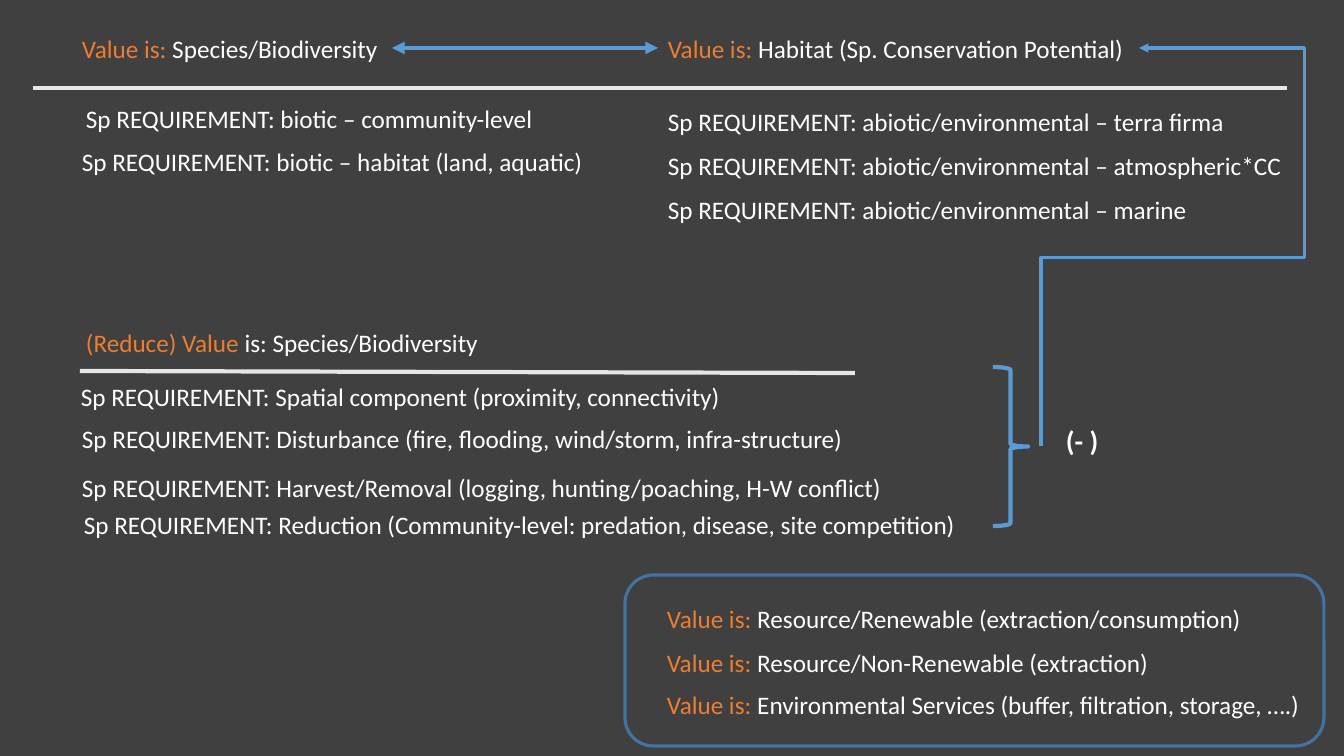
from lxml import etree
from pptx import Presentation
from pptx.dml.color import RGBColor
from pptx.enum.shapes import MSO_CONNECTOR, MSO_SHAPE
from pptx.enum.text import MSO_AUTO_SIZE
from pptx.oxml.ns import qn
from pptx.util import Emu, Pt

STRAIGHT, ELBOW = MSO_CONNECTOR.STRAIGHT, MSO_CONNECTOR.ELBOW
ROUND_RECT, BRACE = MSO_SHAPE.ROUNDED_RECTANGLE, MSO_SHAPE.RIGHT_BRACE
FIT_SHAPE = MSO_AUTO_SIZE.SHAPE_TO_FIT_TEXT

SCALE = 6858000 / 756  # EMU in one px
BACKGROUND = RGBColor(0x40, 0x40, 0x40)
WHITE = RGBColor(0xFF, 0xFF, 0xFF)
ORANGE = RGBColor(0xED, 0x7D, 0x31)
BLUE = RGBColor(0x5B, 0x9B, 0xD5)
DARK_BLUE = RGBColor(0x43, 0x73, 0x9E)
RULE_GREY = RGBColor(0xE7, 0xE6, 0xE6)

VALUE = "Value is: "
REQUIREMENT = "Sp REQUIREMENT: "

# left, top, width, text
REQUIREMENTS = [
    (76, 98, 473, "biotic – community-level"),
    (72, 141, 537, "biotic – habitat (land, aquatic)"),
    (658, 101, 583, "abiotic/environmental – terra firma"),
    (658, 145, 640, "abiotic/environmental – atmospheric*CC"),
    (658, 189, 544, "abiotic/environmental – marine"),
    (71, 376, 666, "Spatial component (proximity, connectivity)"),
    (72, 418, 790, "Disturbance (fire, flooding, wind/storm, infra-structure)"),
    (72, 467, 841, "Harvest/Removal (logging, hunting/poaching, H-W conflict)"),
    (74, 504, 903, "Reduction (Community-level: predation, disease, site competition)"),
]
# top, width, text
RESOURCES = [
    (598, 602, "Resource/Renewable (extraction/consumption)"),
    (642, 507, "Resource/Non-Renewable (extraction)"),
    (684, 678, "Environmental Services (buffer, filtration, storage, ….)"),
]


def px(n):
    return Emu(round(n * SCALE))


def add_text(s, left, top, width, text, lead="", size=18, bold=False, height=40):
    """Add a one-line text box; lead is an orange run before the white text."""
    box = s.shapes.add_textbox(px(left), px(top), px(width), px(height))
    tf = box.text_frame
    tf.word_wrap = False
    tf.auto_size = FIT_SHAPE
    p = tf.paragraphs[0]
    for words, color in ((lead, ORANGE), (text, WHITE)):
        if words:
            r = p.add_run()
            r.text = words
            r.font.name = "Calibri"
            r.font.size = Pt(size)
            r.font.bold = bold
            r.font.color.rgb = color
    return box


def add_outline(s, kind, left, top, width, height, color, weight):
    sp = s.shapes.add_shape(kind, px(left), px(top), px(width), px(height))
    sp.shadow.inherit = False
    sp.fill.background()
    sp.line.color.rgb = color
    sp.line.width = Pt(weight)


def add_line(s, x1, y1, x2, y2, color, weight, kind=STRAIGHT, arrows=()):
    """Add a connector; arrows names its ends (headEnd, tailEnd) that get a triangle."""
    line = s.shapes.add_connector(kind, px(x1), px(y1), px(x2), px(y2))
    line.line.color.rgb = color
    line.line.width = Pt(weight)
    sp_pr = line._element.spPr
    for end in arrows:
        etree.SubElement(sp_pr.find(qn("a:ln")), qn(f"a:{end}"), type="triangle")
    etree.SubElement(sp_pr, qn("a:effectLst"))
    return line


def bend_around(line, center_x, center_y, length, breadth, adjustments):
    """Turn an elbow into a three-corner route that first runs upwards."""
    line.left, line.top = px(center_x - length / 2), px(center_y - breadth / 2)
    line.width, line.height = px(length), px(breadth)
    sp_pr = line._element.spPr
    xfrm = sp_pr.find(qn("a:xfrm"))
    for name, value in (("rot", "5400000"), ("flipH", "1"), ("flipV", "1")):
        xfrm.set(name, value)
    geometry = sp_pr.find(qn("a:prstGeom"))
    geometry.set("prst", "bentConnector4")
    guides = geometry.find(qn("a:avLst"))
    if guides is None:
        guides = etree.SubElement(geometry, qn("a:avLst"))
    for i, value in enumerate(adjustments, 1):
        etree.SubElement(guides, qn("a:gd"), name=f"adj{i}", fmla=f"val {value}")


def main():
    prs = Presentation()
    prs.slide_width, prs.slide_height = px(1344), px(756)
    s = prs.slides.add_slide(prs.slide_layouts[6])
    s.background.fill.solid()
    s.background.fill.fore_color.rgb = BACKGROUND

    species = add_text(s, 72, 28, 320, "Species/Biodiversity", VALUE)
    habitat = add_text(s, 658, 28, 481, "Habitat (Sp. Conservation Potential)", VALUE)
    add_text(s, 76, 322, 430, "is: Species/Biodiversity", "(Reduce) Value ")
    for left, top, width, text in REQUIREMENTS:
        add_text(s, left, top, width, REQUIREMENT + text)

    add_outline(s, ROUND_RECT, 625, 575, 699, 171, DARK_BLUE, 2.25)
    for top, width, text in RESOURCES:
        add_text(s, 657, top, width, text, VALUE)

    add_line(s, 33, 88, 1287, 88, RULE_GREY, 3)
    add_line(s, 80, 371, 855, 373, RULE_GREY, 3)

    add_outline(s, BRACE, 993, 367, 35, 159, BLUE, 3)
    add_text(s, 1056, 419, 53, "(- )", size=20, bold=True, height=44)
    feedback = add_line(s, 1041, 446, 1139, 48, BLUE, 2.25, ELBOW, ["tailEnd"])
    bend_around(feedback, 1090, 247, 398, 98, (47400, 268800))

    link = add_line(s, 392, 48, 658, 48, BLUE, 3, arrows=["headEnd", "tailEnd"])
    link.begin_connect(species, 3)
    link.end_connect(habitat, 1)

    prs.save("out.pptx")


if __name__ == "__main__":
    main()
